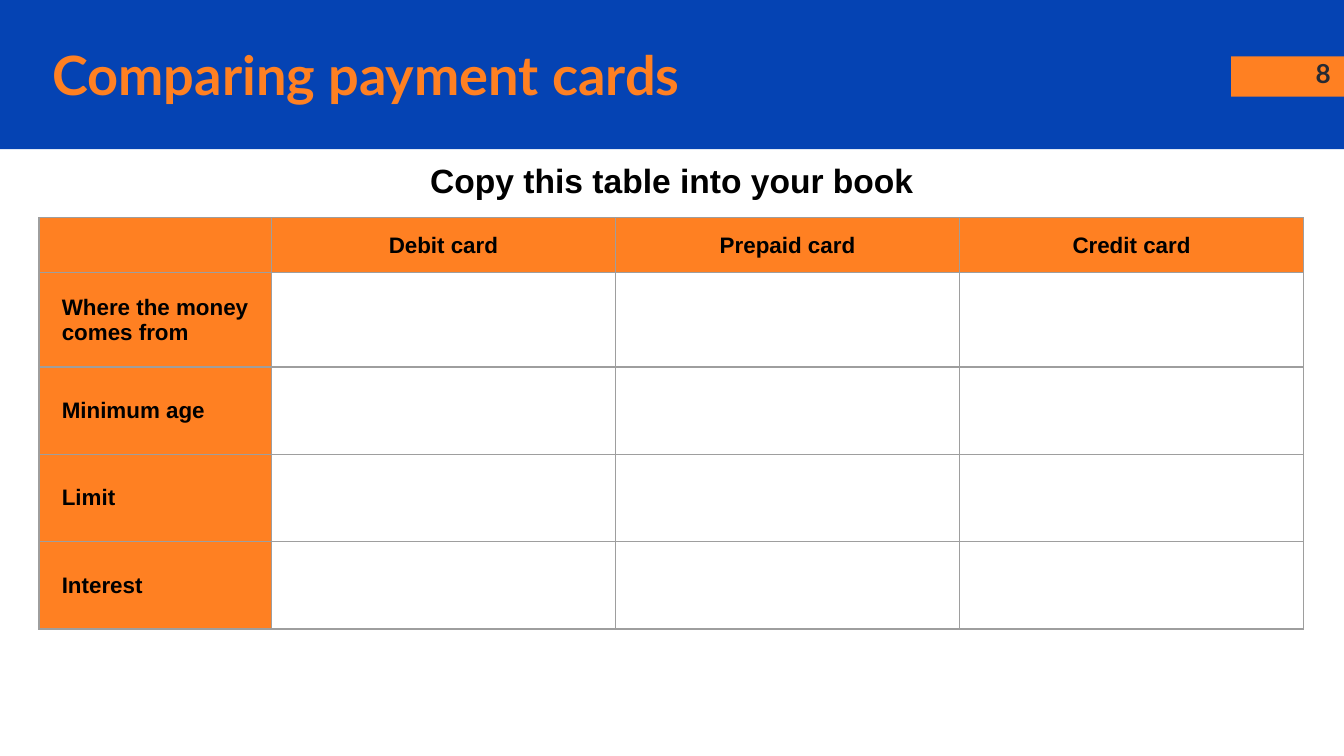
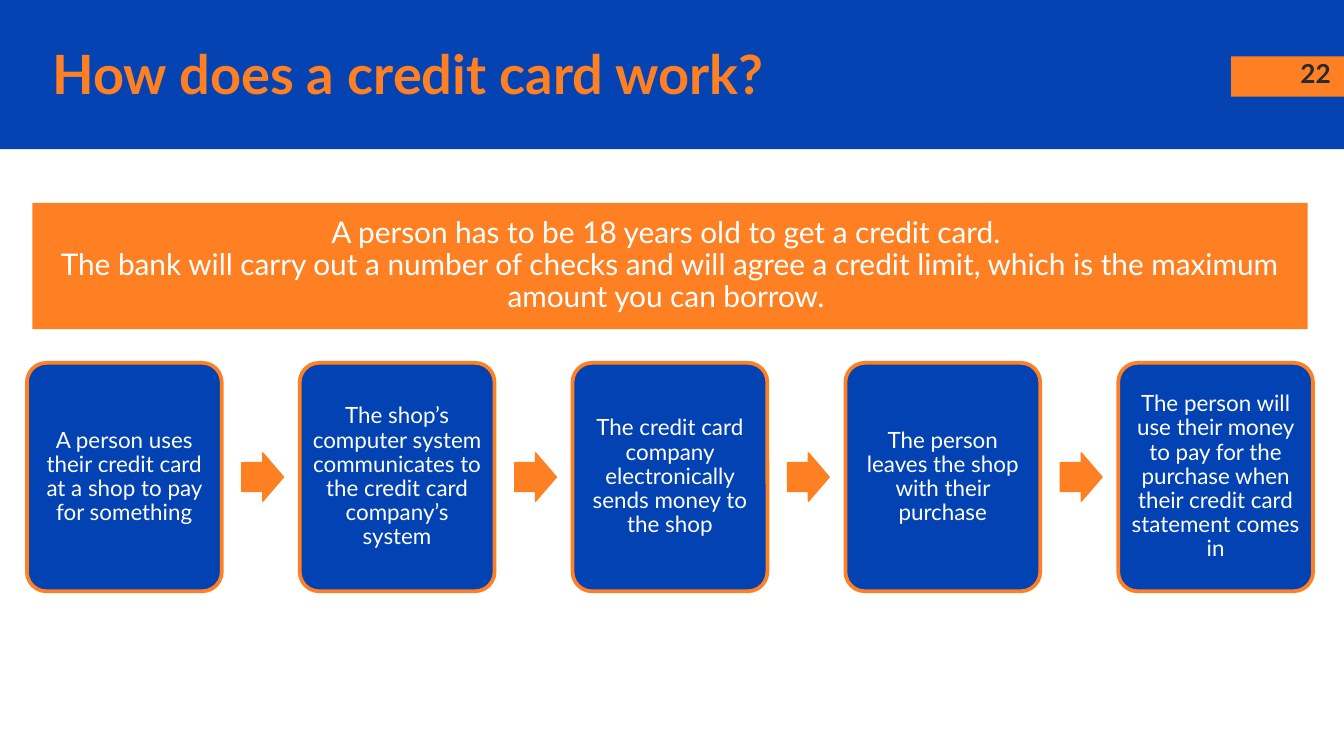
from lxml import etree
from pptx import Presentation
from pptx.dml.color import RGBColor
from pptx.enum import shapes, text
from pptx.oxml import ns
from pptx.util import Inches, Pt

BLUE, CARD_BLUE, ORANGE = "0543B3", "0242B3", "FF8022"
WHITE, BLACK, DARK, GREY = "FFFFFF", "000000", "262A33", "9E9E9E"
LEFT, CENTER, RIGHT = text.PP_ALIGN.LEFT, text.PP_ALIGN.CENTER, text.PP_ALIGN.RIGHT
TOP, MIDDLE = text.MSO_ANCHOR.TOP, text.MSO_ANCHOR.MIDDLE
SHAPE = shapes.MSO_SHAPE

TABLE_TITLE = "Comparing payment cards"
TABLE_TASK = "Copy this table into your book"
CARD_TYPES = ["Debit card", "Prepaid card", "Credit card"]
FEATURES = ["Where the money comes from", "Minimum age", "Limit", "Interest"]

PROCESS_TITLE = "How does a credit card work?"
CONDITIONS = [
    "A person has to be 18 years old to get a credit card. ",
    "The bank will carry out a number of checks and will agree a credit limit, "
    "which is the maximum amount you can borrow. ",
]
STEPS = [
    "A person uses their credit card at a shop to pay for something",
    "The shop’s computer system communicates to the credit card company’s system",
    "The credit card company electronically sends money to the shop",
    "The person leaves the shop with their purchase",
    "The person will use their money to pay for the purchase when their credit card "
    "statement comes in",
]


def color(value):
    return RGBColor.from_string(value)


def write(target, content, size=12, font="Lato", ink=WHITE, bold=False,
          align=LEFT, spacing=None):
    """Fill a shape or table cell with one paragraph per line of content."""
    frame = target.text_frame
    lines = [content] if isinstance(content, str) else content
    frame.word_wrap = True
    for index, line in enumerate(lines):
        paragraph = frame.add_paragraph() if index else frame.paragraphs[0]
        paragraph.text = line
        paragraph.alignment = align
        if spacing:
            paragraph.line_spacing = spacing
        paragraph.font.size = Pt(size)
        paragraph.font.name = font
        paragraph.font.bold = bold
        paragraph.font.color.rgb = color(ink)


def set_margins(target, across, down):
    target.margin_left = target.margin_right = Inches(across)
    target.margin_top = target.margin_bottom = Inches(down)


def add_text(slide, content, left, top, width, height, anchor=TOP, **style):
    box = slide.shapes.add_textbox(*map(Inches, (left, top, width, height)))
    set_margins(box.text_frame, 0.1, 0.1)
    write(box, content, **style)
    box.text_frame.vertical_anchor = anchor


def add_block(slide, kind, left, top, width, height, fill, line=None, line_width=0.75,
              adjustments=()):
    shape = slide.shapes.add_shape(kind, *map(Inches, (left, top, width, height)))
    shape.shadow.inherit = False
    for index, value in enumerate(adjustments):
        shape.adjustments[index] = value
    shape.fill.solid()
    shape.fill.fore_color.rgb = color(fill)
    if line:
        shape.line.color.rgb = color(line)
        shape.line.width = Pt(line_width)
    else:
        shape.line.fill.background()
    set_margins(shape.text_frame, 0.05, 0.05)
    shape.text_frame.vertical_anchor = MIDDLE
    return shape


def add_slide(presentation, title, number, title_top):
    """Add a slide with the blue band, title and page number tab."""
    slide = presentation.slides.add_slide(presentation.slide_layouts[6])
    add_block(slide, SHAPE.RECTANGLE, 0, 0, 10, 1.11, BLUE)
    add_block(slide, SHAPE.RECTANGLE, 9.16, 0.42, 0.84, 0.3, ORANGE)
    add_text(slide, str(number), 9.4, 0.33, 0.6, 0.43, size=14, ink=DARK, bold=True,
             align=RIGHT)
    add_text(slide, title, 0.29, title_top, 8.46, 0.56, anchor=MIDDLE, size=29,
             ink=ORANGE, bold=True)
    return slide


def set_borders(cell):
    properties = cell._tc.get_or_add_tcPr()
    for edge in ("a:lnL", "a:lnR", "a:lnT", "a:lnB"):
        line = etree.SubElement(properties, ns.qn(edge), w=str(Pt(0.75)))
        fill = etree.SubElement(line, ns.qn("a:solidFill"))
        etree.SubElement(fill, ns.qn("a:srgbClr"), val=GREY)


def add_comparison_table(slide):
    rows = [["", *CARD_TYPES]] + [[feature] + [""] * len(CARD_TYPES) for feature in FEATURES]
    widths = [1.73] + [2.56] * len(CARD_TYPES)
    heights = [0.41] + [0.65] * len(FEATURES)
    table = slide.shapes.add_table(
        len(rows), len(widths), Inches(0.29), Inches(1.62),
        Inches(sum(widths)), Inches(sum(heights))).table
    table.first_row = table.horz_banding = False
    for column, width in zip(table.columns, widths):
        column.width = Inches(width)
    for row, height in zip(table.rows, heights):
        row.height = Inches(height)
    for r, labels in enumerate(rows):
        for c, label in enumerate(labels):
            cell = table.cell(r, c)
            is_feature = r > 0 and c == 0
            set_borders(cell)
            if r == 0 or is_feature:
                cell.fill.solid()
                cell.fill.fore_color.rgb = color(ORANGE)
            else:
                cell.fill.background()
            cell.vertical_anchor = MIDDLE
            set_margins(cell, *((0.17, 0.15) if is_feature else (0.1, 0.05)))
            write(cell, label, font="Arial", ink=BLACK, bold=True,
                  align=LEFT if is_feature else CENTER)


def add_process(slide):
    first, pitch, width = 0.2, 2.03, 1.45
    for index, step in enumerate(STEPS):
        left = first + index * pitch
        card = add_block(slide, SHAPE.ROUNDED_RECTANGLE, left, 2.7, width, 1.7, CARD_BLUE,
                         ORANGE, 2, [0.1])
        write(card, step, align=CENTER, spacing=0.9)
        if index < len(STEPS) - 1:
            add_block(slide, SHAPE.RIGHT_ARROW, left + width + 0.15, 3.37, 0.31, 0.36,
                      ORANGE, ORANGE, adjustments=[0.6, 0.5])


def main():
    presentation = Presentation()
    presentation.slide_width = Inches(10)
    presentation.slide_height = presentation.slide_width * 9 // 16

    slide = add_slide(presentation, TABLE_TITLE, 8, 0.27)
    add_comparison_table(slide)
    add_text(slide, TABLE_TASK, 0, 1.09, 10, 0.5, size=18, font="Arial", ink=BLACK,
             bold=True, align=CENTER)

    slide = add_slide(presentation, PROCESS_TITLE, 22, 0.26)
    add_process(slide)
    banner = add_block(slide, SHAPE.RECTANGLE, 0.24, 1.51, 9.49, 0.94, ORANGE)
    write(banner, CONDITIONS, size=16, align=CENTER, spacing=0.9)

    presentation.save("out.pptx")


if __name__ == "__main__":
    main()
